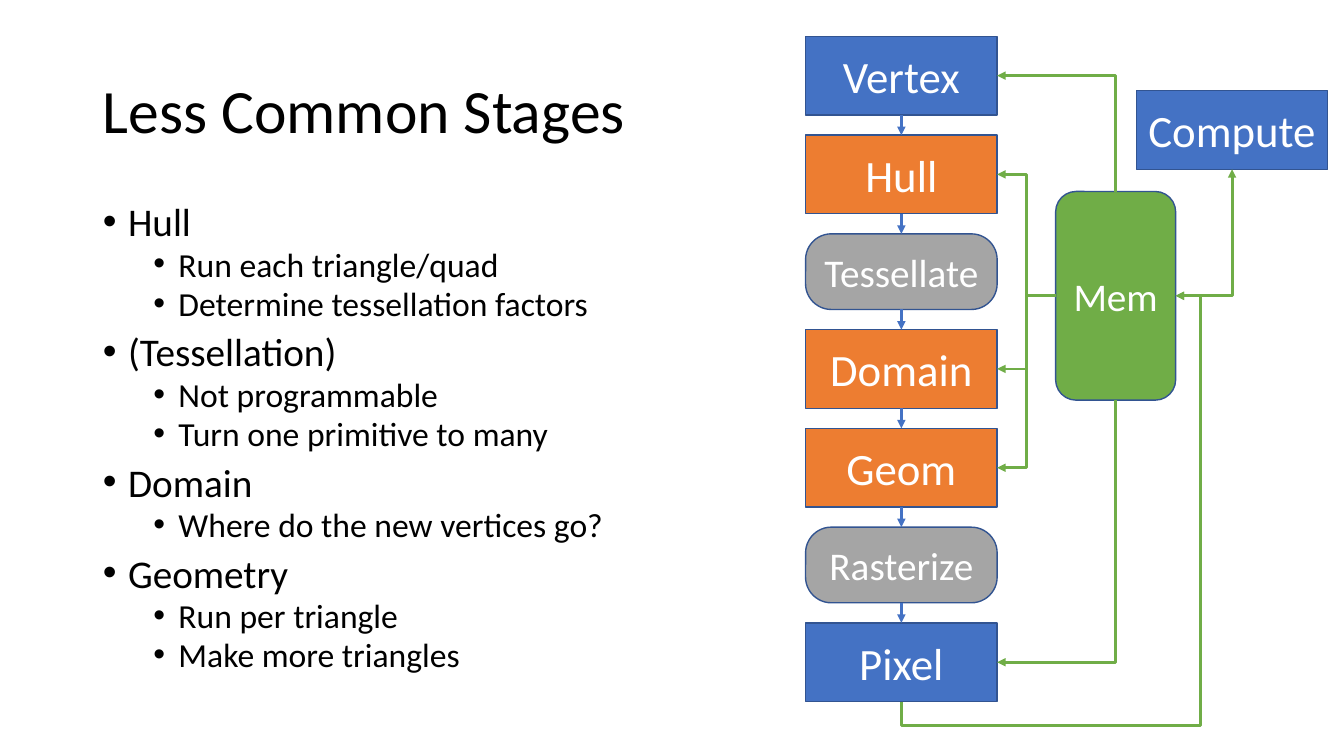
from dataclasses import dataclass

from lxml import etree
from pptx import Presentation
from pptx import util as u
from pptx.dml.color import RGBColor
from pptx.enum import shapes, text
from pptx.oxml.ns import qn

Inches = u.Inches
TOP, LEFT, BOTTOM, RIGHT = range(4)


@dataclass(frozen=True)
class Theme:
    font: str = "Calibri"
    black: str = "000000"
    white: str = "FFFFFF"
    blue: str = "4472C4"
    orange: str = "ED7D31"
    gray: str = "A5A5A5"
    green: str = "70AD47"
    edge: str = "325491"
    title: int = 44
    large: int = 32
    body: int = 28
    small: int = 24


THEME = Theme()

POINTS = [
    ("Hull", ["Run each triangle/quad", "Determine tessellation factors"]),
    ("(Tessellation)", ["Not programmable", "Turn one primitive to many"]),
    ("Domain", ["Where do the new vertices go?"]),
    ("Geometry", ["Run per triangle", "Make more triangles"]),
]

STAGES = [
    ("Vertex", THEME.blue),
    ("Hull", THEME.orange),
    ("Tessellate", THEME.gray),
    ("Domain", THEME.orange),
    ("Geom", THEME.orange),
    ("Rasterize", THEME.gray),
    ("Pixel", THEME.blue),
]


def style(para, size, color):
    for run in para.runs:
        run.font.name = THEME.font
        run.font.size = u.Pt(size)
        run.font.color.rgb = RGBColor.from_string(color)


def place(item, left, top, width, height):
    item.left, item.top = Inches(left), Inches(top)
    item.width, item.height = Inches(width), Inches(height)


def add_title(slide, words):
    title = slide.shapes.title
    place(title, 0.92, 0.4, 11.5, 1.45)
    frame = title.text_frame
    frame.text = words
    frame.auto_size = text.MSO_AUTO_SIZE.NONE
    frame.vertical_anchor = text.MSO_ANCHOR.MIDDLE
    para = frame.paragraphs[0]
    para.alignment = text.PP_ALIGN.LEFT
    para.line_spacing = 0.9
    style(para, THEME.title, THEME.black)


def format_point(para, level):
    para.level = level
    para.line_spacing = 0.8
    para.space_before = u.Pt(5 if level else 10)
    style(para, THEME.small if level else THEME.body, THEME.black)
    props = para._p.get_or_add_pPr()
    props.set("marL", str(Inches(0.25 + 0.5 * level)))
    props.set("indent", str(Inches(-0.25)))
    etree.SubElement(props, qn("a:buFont")).set("typeface", "Arial")
    etree.SubElement(props, qn("a:buChar")).set("char", "•")


def add_points(slide, points):
    body = slide.placeholders[1]
    place(body, 0.92, 2, 11.5, 4.76)
    rows = []
    for head, subs in points:
        rows.append((head, 0))
        rows += [(sub, 1) for sub in subs]
    frame = body.text_frame
    frame.text = "\n".join(words for words, level in rows)
    frame.auto_size = text.MSO_AUTO_SIZE.NONE
    for para, (words, level) in zip(frame.paragraphs, rows):
        format_point(para, level)


def add_box(slide, words, box, fill, size=THEME.large, curve=None):
    kind = shapes.MSO_SHAPE.RECTANGLE
    if curve:
        kind = shapes.MSO_SHAPE.ROUNDED_RECTANGLE
    node = slide.shapes.add_shape(kind, *map(Inches, box))
    if curve:
        node.adjustments[0] = curve
    node.shadow.inherit = False
    node.fill.solid()
    node.fill.fore_color.rgb = RGBColor.from_string(fill)
    node.line.color.rgb = RGBColor.from_string(THEME.edge)
    node.line.width = u.Pt(1)
    frame = node.text_frame
    frame.text = words
    frame.vertical_anchor = text.MSO_ANCHOR.MIDDLE
    para = frame.paragraphs[0]
    para.alignment = text.PP_ALIGN.CENTER
    style(para, size, THEME.white)
    return node


def add_link(slide, start, end, color, kind=shapes.MSO_CONNECTOR.STRAIGHT, both=False):
    link = slide.shapes.add_connector(kind, 0, 0, 0, 0)
    link.begin_connect(*start)
    link.end_connect(*end)
    link.line.color.rgb = RGBColor.from_string(color)
    link.line.width = u.Pt(2)
    props = link._element.spPr
    line = props.find(qn("a:ln"))
    for tip in ["headEnd", "tailEnd"] if both else ["tailEnd"]:
        etree.SubElement(line, qn("a:" + tip)).set("type", "triangle")
    etree.SubElement(props, qn("a:effectLst"))
    return link


def add_elbow(slide, start, end, both=False):
    return add_link(slide, start, end, THEME.green, shapes.MSO_CONNECTOR.ELBOW, both)


def turn(link, preset, bends=()):
    across, down = link.end_x - link.begin_x, link.end_y - link.begin_y
    mid_x, mid_y = (link.begin_x + link.end_x) // 2, (link.begin_y + link.end_y) // 2
    link.width, link.height = abs(down), abs(across)
    link.left, link.top = mid_x - abs(down) // 2, mid_y - abs(across) // 2
    props = link._element.spPr
    frame = props.find(qn("a:xfrm"))
    frame.set("rot", "5400000")
    frame.set("flipH", str(int(down < 0)))
    frame.set("flipV", str(int(across > 0)))
    shape = props.find(qn("a:prstGeom"))
    shape.set("prst", preset)
    guides = shape.find(qn("a:avLst"))
    for count, bend in enumerate(bends, 1):
        guide = etree.SubElement(guides, qn("a:gd"))
        guide.set("name", f"adj{count}")
        guide.set("fmla", f"val {round(bend * 100000)}")


def add_stages(slide):
    nodes, top = {}, 0.36
    for words, fill in STAGES:
        fixed = fill == THEME.gray
        height = 0.75 if fixed else 0.78
        size, curve = (THEME.body, 0.34) if fixed else (THEME.large, None)
        box = (7.99, top, 1.9, height)
        nodes[words] = add_box(slide, words, box, fill, size, curve)
        top += height + 0.2
    chain = list(nodes.values())
    for upper, lower in zip(chain, chain[1:]):
        add_link(slide, (upper, BOTTOM), (lower, TOP), THEME.blue)
    return nodes


def add_memory(slide, nodes):
    mem = add_box(slide, "Mem", (10.47, 1.9, 1.19, 2.07), THEME.green, THEME.body, 0.17)
    compute = add_box(slide, "Compute", (11.27, 0.9, 1.9, 0.78), THEME.blue)
    for words, side in [("Vertex", TOP), ("Pixel", BOTTOM)]:
        link = add_elbow(slide, (mem, side), (nodes[words], RIGHT))
        turn(link, "bentConnector2")
    for words in ["Hull", "Domain", "Geom"]:
        add_elbow(slide, (mem, LEFT), (nodes[words], RIGHT))
    output = add_elbow(slide, (nodes["Pixel"], BOTTOM), (mem, RIGHT))
    turn(output, "bentConnector4", (-0.06, 1.09))
    both = add_elbow(slide, (compute, BOTTOM), (mem, RIGHT), both=True)
    turn(both, "bentConnector2")


def main():
    deck = Presentation()
    deck.slide_width, deck.slide_height = Inches(13.33), Inches(7.5)
    slide = deck.slides.add_slide(deck.slide_layouts[1])
    add_title(slide, "Less Common Stages")
    add_points(slide, POINTS)
    nodes = add_stages(slide)
    add_memory(slide, nodes)
    deck.save("out.pptx")


if __name__ == "__main__":
    main()
